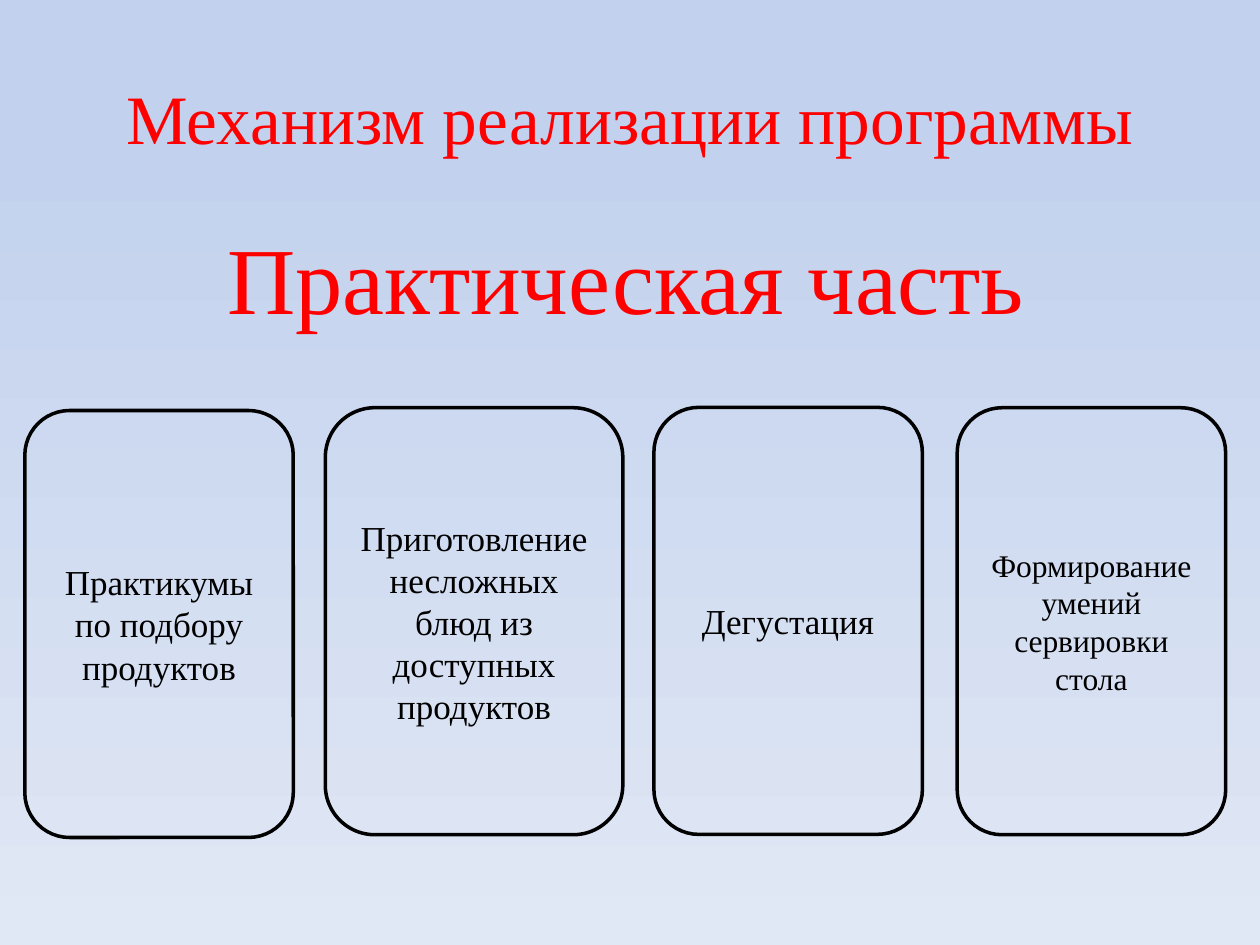
from dataclasses import dataclass

import pptx
import pptx.dml.color
import pptx.enum.shapes
import pptx.enum.text
import pptx.util

Pt = pptx.util.Pt
FONT = "Times New Roman"
COLORS = {
    "sky_top": "C2D1ED",
    "sky_bottom": "E1E8F5",
    "heading": "FF0000",
    "ink": "000000",
}


@dataclass
class Label:
    text: str
    left: float
    top: float
    width: float
    height: float
    size: float
    color: str = "ink"
    space_before: float = 0
    anchor: pptx.enum.text.MSO_ANCHOR = pptx.enum.text.MSO_ANCHOR.MIDDLE

    def bounds(self) -> list[pptx.util.Length]:
        return [Pt(v) for v in (self.left, self.top, self.width, self.height)]


CARD_WIDTH = 153.4
CARD_HEIGHT = 244

HEADINGS = [
    Label("Механизм реализации программы", 36, 21.6, 648, 90, 39.6, "heading"),
    Label("Практическая часть", 36.7, 122.4, 641.5, 87.1, 54, "heading", 6,
          pptx.enum.text.MSO_ANCHOR.TOP),
]
ACTIVITIES = [
    Label("Практикумы по подбору продуктов", 14.2, 234.6, CARD_WIDTH, CARD_HEIGHT, 20),
    Label("Приготовление несложных блюд из доступных продуктов",
          185.9, 233, 170, CARD_HEIGHT, 20),
    Label("Дегустация", 373.7, 232.8, CARD_WIDTH, CARD_HEIGHT, 20),
    Label("Формирование умений сервировки стола", 547, 233, CARD_WIDTH, CARD_HEIGHT, 18),
]


def rgb(name: str) -> pptx.dml.color.RGBColor:
    return pptx.dml.color.RGBColor.from_string(COLORS[name])


def write_text(frame: pptx.text.text.TextFrame, label: Label) -> None:
    frame.word_wrap = True
    frame.vertical_anchor = label.anchor
    paragraph = frame.paragraphs[0]
    paragraph.text = label.text
    paragraph.alignment = pptx.enum.text.PP_ALIGN.CENTER
    paragraph.space_before = Pt(label.space_before)
    paragraph.font.name = FONT
    paragraph.font.size = Pt(label.size)
    paragraph.font.color.rgb = rgb(label.color)


def draw_heading(slide: pptx.slide.Slide, label: Label) -> None:
    heading = slide.shapes.add_textbox(*label.bounds())
    write_text(heading.text_frame, label)


def draw_card(slide: pptx.slide.Slide, label: Label) -> None:
    card = slide.shapes.add_shape(
        pptx.enum.shapes.MSO_SHAPE.ROUNDED_RECTANGLE, *label.bounds())
    card.shadow.inherit = False
    card.fill.background()
    card.line.color.rgb = rgb("ink")
    card.line.width = Pt(2)
    write_text(card.text_frame, label)


def paint_background(slide: pptx.slide.Slide) -> None:
    sky = slide.background.fill
    sky.gradient()
    sky.gradient_angle = 270
    stops = ((0.16, "sky_top"), (1, "sky_bottom"))
    for stop, (position, color) in zip(sky.gradient_stops, stops):
        stop.position = position
        stop.color.rgb = rgb(color)


def main() -> None:
    deck = pptx.Presentation()
    deck.slide_width, deck.slide_height = Pt(720), Pt(540)
    slide = deck.slides.add_slide(deck.slide_layouts[6])
    paint_background(slide)
    for heading in HEADINGS:
        draw_heading(slide, heading)
    for activity in ACTIVITIES:
        draw_card(slide, activity)
    deck.save("out.pptx")


if __name__ == "__main__":
    main()
